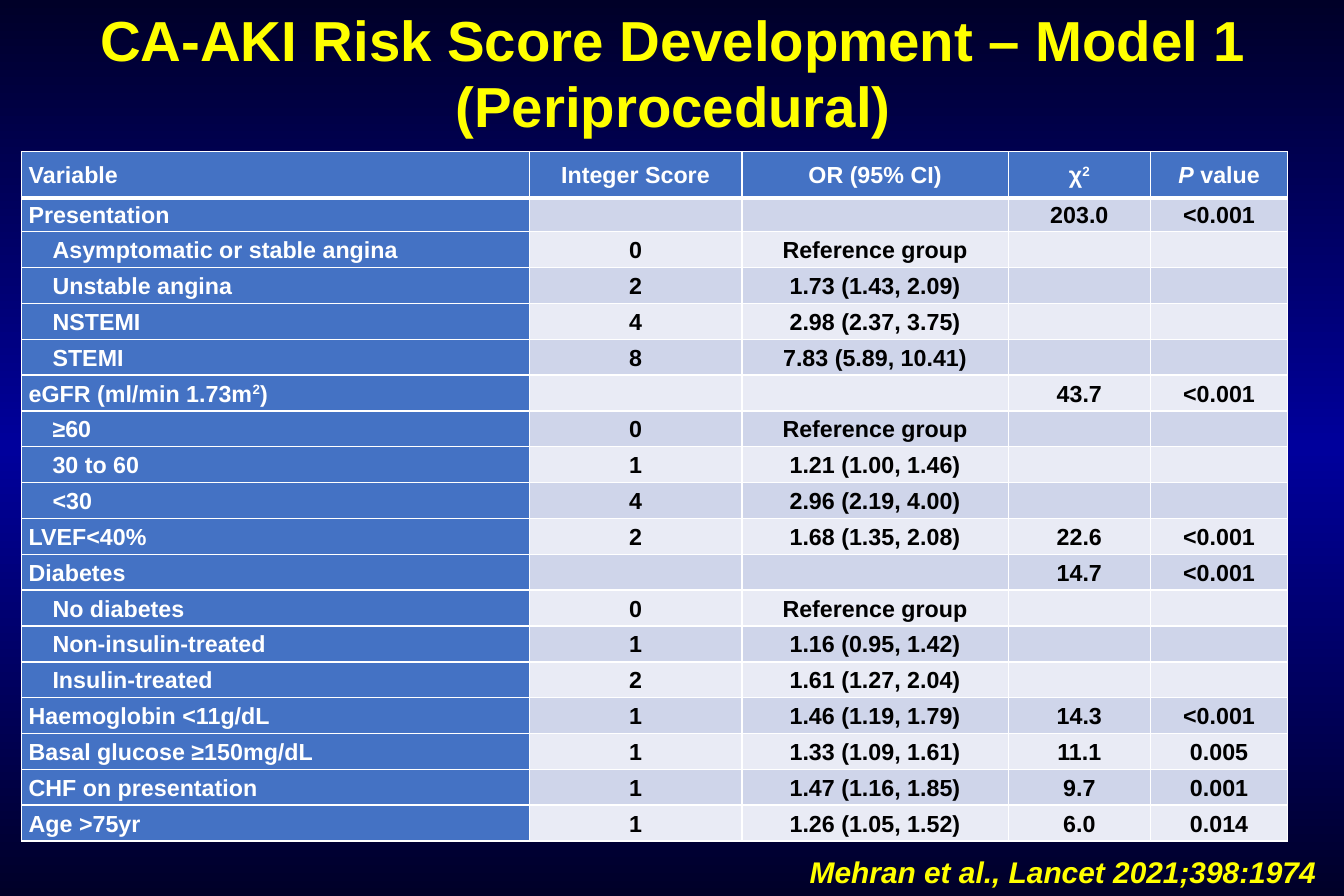
import copy
from dataclasses import dataclass
import pptx
import pptx.dml.color
import pptx.enum.text
import pptx.oxml
import pptx.oxml.ns
import pptx.util

Inches = pptx.util.Inches
Pt = pptx.util.Pt
Align = pptx.enum.text.PP_ALIGN
Anchor = pptx.enum.text.MSO_ANCHOR

YELLOW, WHITE, BLACK = "FFFF00", "FFFFFF", "000000"
HEAD, BANDS = "4472C4", ("CFD5EA", "E9EBF5")
WIDTHS = (4.25, 1.78, 2.23, 1.19, 1.15)
HEIGHTS = (0.39, 0.28) + (0.3,) * 17


@dataclass(frozen=True)
class Bit:
    text: str
    sup: bool = False
    slant: bool = False


@dataclass(frozen=True)
class Row:
    name: str | tuple[Bit, ...]
    score: str = ""
    odds: str = ""
    chi: str | tuple[Bit, ...] = ""
    prob: str | tuple[Bit, ...] = ""
    sub: bool = False


REF = "Reference group"
ROWS = (
    Row("Variable", "Integer Score", "OR (95% CI)",
        (Bit("χ"), Bit("2", sup=True)), (Bit("P", slant=True), Bit(" value"))),
    Row("Presentation", chi="203.0", prob="<0.001"),
    Row("Asymptomatic or stable angina", "0", REF, sub=True),
    Row("Unstable angina", "2", "1.73 (1.43, 2.09)", sub=True),
    Row("NSTEMI", "4", "2.98 (2.37, 3.75)", sub=True),
    Row("STEMI", "8", "7.83 (5.89, 10.41)", sub=True),
    Row((Bit("eGFR (ml/min 1.73m"), Bit("2", sup=True), Bit(")")),
        chi="43.7", prob="<0.001"),
    Row("≥60", "0", REF, sub=True),
    Row("30 to 60", "1", "1.21 (1.00, 1.46)", sub=True),
    Row("<30", "4", "2.96 (2.19, 4.00)", sub=True),
    Row("LVEF<40%", "2", "1.68 (1.35, 2.08)", "22.6", "<0.001"),
    Row("Diabetes", chi="14.7", prob="<0.001"),
    Row("No diabetes", "0", REF, sub=True),
    Row("Non-insulin-treated", "1", "1.16 (0.95, 1.42)", sub=True),
    Row("Insulin-treated", "2", "1.61 (1.27, 2.04)", sub=True),
    Row("Haemoglobin <11g/dL", "1", "1.46 (1.19, 1.79)", "14.3", "<0.001"),
    Row("Basal glucose ≥150mg/dL", "1", "1.33 (1.09, 1.61)", "11.1", "0.005"),
    Row("CHF on presentation", "1", "1.47 (1.16, 1.85)", "9.7", "0.001"),
    Row("Age >75yr", "1", "1.26 (1.05, 1.52)", "6.0", "0.014"),
)


def color(tone: str) -> pptx.dml.color.RGBColor:
    return pptx.dml.color.RGBColor.from_string(tone)


def style(para, size: float, tone: str) -> None:
    para.font.name = "Arial"
    para.font.size = Pt(size)
    para.font.bold = True
    para.font.color.rgb = color(tone)


def paint_back(slide) -> None:
    fill = slide.background.fill
    fill.gradient()
    fill.gradient_angle = 90
    first = fill.gradient_stops[0]._gs
    first.addnext(copy.deepcopy(first))
    for stop, (place, tone) in zip(
            fill.gradient_stops, ((0, "000028"), (0.5, "00009C"), (1, "000028"))):
        stop.position = place
        stop.color.rgb = color(tone)


def add_text(slide, box: tuple[float, ...], text: str, size: float):
    frame = slide.shapes.add_textbox(*map(Inches, box)).text_frame
    frame.word_wrap = True
    para = frame.paragraphs[0]
    para.text = text
    style(para, size, YELLOW)
    return frame


def edge_cell(cell, top: bool) -> None:
    props = cell._tc.get_or_add_tcPr()
    for spot, side in enumerate("LRTB"):
        width = Pt(3 if top and side == "B" else 1)
        props.insert(spot, pptx.oxml.parse_xml(
            f'<a:ln{side} {pptx.oxml.ns.nsdecls("a")} w="{width}"><a:solidFill>'
            f'<a:srgbClr val="{WHITE}"/></a:solidFill></a:ln{side}>'))


def fill_cell(cell, text: str | tuple[Bit, ...], line: int, col: int, sub: bool) -> None:
    dark = line == 0 or col == 0
    cell.fill.solid()
    cell.fill.fore_color.rgb = color(HEAD if dark else BANDS[(line - 1) % 2])
    cell.vertical_anchor = Anchor.MIDDLE
    cell.margin_left = cell.margin_right = Inches(0.06)
    cell.margin_top = cell.margin_bottom = 0
    edge_cell(cell, line == 0)
    para = cell.text_frame.paragraphs[0]
    para.alignment = Align.CENTER if col else Align.LEFT
    para.line_spacing = 1.07
    para.space_after = Pt(8)
    if sub and col == 0:
        props = para._p.get_or_add_pPr()
        props.set("marL", "0")
        props.set("indent", str(Inches(0.2)))
    style(para, 14, WHITE if dark else BLACK)
    if isinstance(text, str):
        para.text = text
        return
    for bit in text:
        run = para.add_run()
        run.text = bit.text
        if bit.slant:
            run.font.italic = True
        if bit.sup:
            run._r.get_or_add_rPr().set("baseline", "30000")


def add_scores(slide) -> None:
    table = slide.shapes.add_table(
        len(ROWS), len(WIDTHS), Inches(0.18), Inches(1.27),
        Inches(sum(WIDTHS)), Inches(sum(HEIGHTS))).table
    table.first_row = table.horz_banding = False
    props = table._tbl.tblPr
    props.remove(props[0])
    for col, width in enumerate(WIDTHS):
        table.columns[col].width = Inches(width)
    for line, (row, height) in enumerate(zip(ROWS, HEIGHTS)):
        table.rows[line].height = Inches(height)
        for col, text in enumerate((row.name, row.score, row.odds, row.chi, row.prob)):
            fill_cell(table.cell(line, col), text, line, col, row.sub)


def main() -> None:
    deck = pptx.Presentation()
    deck.slide_width = Inches(11.25)
    deck.slide_height = Inches(7.5)
    slide = deck.slides.add_slide(deck.slide_layouts[6])
    paint_back(slide)
    title = add_text(slide, (0.01, 0, 11.25, 1.22),
                     "CA-AKI Risk Score Development – Model 1 (Periprocedural)", 34)
    title.vertical_anchor = Anchor.MIDDLE
    title.paragraphs[0].alignment = Align.CENTER
    title.paragraphs[0].line_spacing = Pt(40)
    add_scores(slide)
    source = add_text(slide, (6.68, 7.1, 4.8, 0.4),
                      "Mehran et al., Lancet 2021;398:1974", 18)
    source.paragraphs[0].font.italic = True
    deck.save("out.pptx")


if __name__ == "__main__":
    main()
